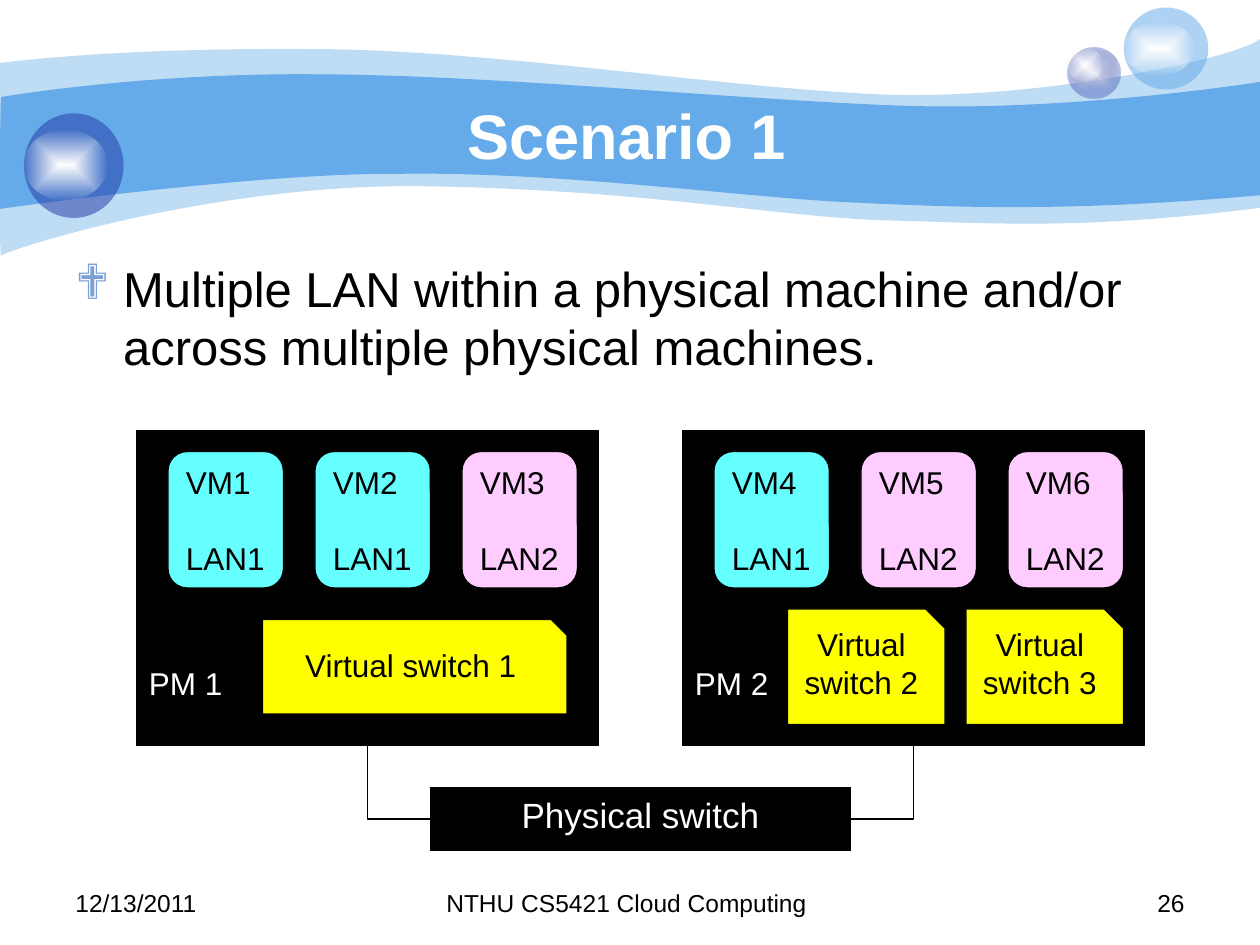
from pptx import Presentation
from pptx import util as u
from pptx.dml.color import RGBColor
from pptx.enum import shapes, text
from pptx.oxml import parse_xml
from pptx.oxml.ns import qn
from lxml import etree

COLORS = {
    "black": "000000", "white": "FFFFFF", "sky": "65AAE9", "navy": "233DA9",
    "mist": "E1E2ED", "bullet": "7DA0D3", "lan1": "66FFFF", "lan2": "FFCCFF",
    "switch": "FFFF00",
}
W, H = u.Inches(10), u.Inches(7.5)
COL, ROW = W // 120, H // 90
KIND = shapes.MSO_SHAPE
LEFT, CENTER, RIGHT = text.PP_ALIGN.LEFT, text.PP_ALIGN.CENTER, text.PP_ALIGN.RIGHT
TOP, MIDDLE, BOTTOM = text.MSO_ANCHOR.TOP, text.MSO_ANCHOR.MIDDLE, text.MSO_ANCHOR.BOTTOM
NS = "http://schemas.openxmlformats.org/drawingml/2006/main"


def rgb(name):
    """Return the named palette colour."""
    return RGBColor.from_string(COLORS[name])


def place(box):
    """Turn a box in columns and rows into slide lengths."""
    x, y, w, h = box
    return int(x * COL), int(y * ROW), int(w * COL), int(h * ROW)


def write(sp, lines, size, color="black", align=LEFT, anchor=TOP, bold=False, gap=0):
    """Write lines as paragraphs, with a gap in points before each later one."""
    tf = sp.text_frame
    tf.word_wrap = True
    tf.vertical_anchor = anchor
    for i, line in enumerate(lines):
        p = tf.paragraphs[0] if i == 0 else tf.add_paragraph()
        p.alignment = align
        if i:
            p.space_before = u.Pt(gap)
        r = p.add_run()
        r.text = line
        r.font.name, r.font.size, r.font.bold = "Arial", u.Pt(size), bold
        r.font.color.rgb = rgb(color)
    return tf


def add_text(s, box, line, size, **style):
    """Add a text box holding one paragraph."""
    return write(s.shapes.add_textbox(*place(box)), [line], size, **style)


def add_block(s, kind, box, fill):
    """Add a filled shape with a thin black outline."""
    sp = s.shapes.add_shape(kind, *place(box))
    sp.shadow.inherit = False
    sp.fill.solid()
    sp.fill.fore_color.rgb = rgb(fill)
    sp.line.color.rgb = rgb("black")
    sp.line.width = u.Pt(0.75)
    return sp


def tint(sp, color, opacity=100):
    """Fill a decoration without outline at an opacity in percent."""
    sp.shadow.inherit = False
    sp.line.fill.background()
    sp.fill.solid()
    sp.fill.fore_color.rgb = rgb(color)
    if opacity < 100:
        clr = sp.element.spPr.find(qn("a:solidFill"))[0]
        etree.SubElement(clr, qn("a:alpha")).set("val", str(opacity * 1000))


def glow(sp, inner, outer, opacity):
    """Fill a decoration with a gradient from its centre outwards."""
    tint(sp, inner)
    spPr = sp.element.spPr
    grad = parse_xml(
        f'<a:gradFill xmlns:a="{NS}" rotWithShape="1"><a:gsLst>'
        f'<a:gs pos="0"><a:srgbClr val="{COLORS[inner]}"/></a:gs>'
        f'<a:gs pos="100000"><a:srgbClr val="{COLORS[outer]}">'
        f'<a:alpha val="{opacity * 1000}"/></a:srgbClr></a:gs></a:gsLst>'
        '<a:path path="shape"><a:fillToRect l="50000" t="50000" r="50000" b="50000"/>'
        '</a:path></a:gradFill>')
    spPr.replace(spPr.find(qn("a:solidFill")), grad)


def bend(segments):
    """Merge each three line segments into one cubic curve."""
    for i in range(0, len(segments), 3):
        cubic = etree.Element(qn("a:cubicBezTo"))
        segments[i].addprevious(cubic)
        for seg in segments[i:i + 3]:
            cubic.append(seg[0])
            seg.getparent().remove(seg)


def add_wave(s, upper, lower, opacity):
    """Add a ribbon between two chains of curves, given in hundredths of an inch."""
    fb = s.shapes.build_freeform(*upper[0], scale=u.Inches(0.01))
    fb.add_line_segments(upper[1:] + lower, close=True)
    sp = fb.convert_to_shape()
    segments = list(sp.element.iter(qn("a:lnTo")))
    turn = len(upper) - 1
    bend(segments[:turn])
    bend(segments[turn + 1:turn + len(lower)])
    tint(sp, "sky", opacity)


def add_orb(s, box, shine, color, opacity, inner=None):
    """Add a ball filling the box (inches) with a shine of the given top, width and height."""
    def ball(*lengths):
        return s.shapes.add_shape(KIND.OVAL, *map(u.Inches, lengths))

    sp = ball(*box)
    if inner:
        glow(sp, inner, color, opacity)
    else:
        tint(sp, color, opacity)
    top, w, h = shine
    glow(ball(box[0], top, w, h), "white", "white", 0)


def add_banner(s):
    """Draw the waves and orbs across the top of the slide."""
    add_wave(s,
             [(0, 50), (24, 47), (107, 38), (247, 39), (386, 39), (575, 70),
              (699, 75), (822, 80), (980, 47), (1000, 31)],
             [(1000, 165), (858, 183), (787, 177), (705, 175), (622, 173), (515, 151),
              (343, 148), (172, 144), (4, 199), (1, 203), (-1, 208), (0, 75), (0, 50)], 41)
    add_wave(s,
             [(1, 77), (2, 77), (110, 58), (248, 59), (386, 59), (595, 80),
              (718, 84), (841, 88), (976, 69), (1000, 65)],
             [(1000, 155), (853, 168), (765, 165), (682, 161), (599, 158), (447, 136),
              (317, 138), (203, 137), (-2, 166), (-1, 166), (0, 166), (0, 77), (1, 77)], 100)
    add_orb(s, (8.47, 0.38, 0.42, 0.4), (0.38, 0.28, 0.27), "navy", 31, inner="mist")
    add_orb(s, (8.92, 0.06, 0.67, 0.65), (0.17, 0.56, 0.43), "sky", 53)
    add_orb(s, (0.19, 0.9, 0.79, 0.83), (1.03, 0.66, 0.56), "navy", 53)


def add_body(s, box, line):
    """Add the bulleted statement."""
    p = add_text(s, box, line, 28).paragraphs[0]
    p.space_before = u.Pt(4)
    pPr = p._p.get_or_add_pPr()
    pPr.set("marL", str(u.Inches(0.38)))
    pPr.set("indent", str(-u.Inches(0.38)))
    clr = etree.SubElement(etree.SubElement(pPr, qn("a:buClr")), qn("a:srgbClr"))
    clr.set("val", COLORS["bullet"])
    etree.SubElement(pPr, qn("a:buFont")).set("typeface", "Wingdings")
    etree.SubElement(pPr, qn("a:buChar")).set("char", "❖")


def add_machine(s, box, name, vms, switches):
    """Add a physical machine with its VMs and virtual switches, offset from its corner."""
    x, y, _, _ = box
    machine = add_block(s, KIND.RECTANGLE, box, "black")
    write(machine, [name], 18, "white", anchor=BOTTOM).margin_bottom = int(4.2 * ROW)
    for i, (vm, lan) in enumerate(vms):
        sp = add_block(s, KIND.ROUNDED_RECTANGLE, (x + 3 + 14 * i, y + 2, 11, 13), lan.lower())
        write(sp, [vm, lan], 18, gap=21.5)
    for label, (dx, dy, w, h), inset in switches:
        sp = add_block(s, KIND.SNIP_1_RECTANGLE, (x + dx, y + dy, w, h), "switch")
        write(sp, [label], 18, align=CENTER).margin_top = u.Inches(inset)
    return machine


def add_link(s, switch, side, machine):
    """Join a side of the physical switch to the bottom of a machine with one bend."""
    c = s.shapes.add_connector(shapes.MSO_CONNECTOR.ELBOW, 0, 0, 0, 0)
    c.begin_connect(switch, side)
    c.end_connect(machine, 2)
    c.line.color.rgb = rgb("black")
    c.line.width = u.Pt(0.75)
    spPr = c.element.spPr
    spPr.find(qn("a:prstGeom")).set("prst", "bentConnector2")
    etree.SubElement(spPr, qn("a:effectLst"))


def add_network(s, x, y):
    """Draw both machines and the physical switch from the top left cell."""
    pm1 = add_machine(s, (x, y, 44, 30), "PM 1",
                      [("VM1", "LAN1"), ("VM2", "LAN1"), ("VM3", "LAN2")],
                      [("Virtual switch 1", (12, 18, 29, 9), 0.15)])
    pm2 = add_machine(s, (x + 52, y, 44, 30), "PM 2",
                      [("VM4", "LAN1"), ("VM5", "LAN2"), ("VM6", "LAN2")],
                      [(f"Virtual switch {n}", (10 + 17 * i, 17, 15, 11), 0.05)
                       for i, n in enumerate((2, 3))])
    switch = add_block(s, KIND.RECTANGLE, (x + 28, y + 34, 40, 6), "black")
    write(switch, ["Physical switch"], 20, "white", CENTER)
    add_link(s, switch, 3, pm2)
    add_link(s, switch, 1, pm1)


def add_footer(s, y):
    """Add the date, course and slide number in one row."""
    for x, w, line, align in ((6, 28, "12/13/2011", LEFT),
                              (41, 38, "NTHU CS5421 Cloud Computing ", CENTER),
                              (86, 28, "26", RIGHT)):
        add_text(s, (x, y, w, 4.2), line, 14, align=align)


def main():
    """Build and save the slide."""
    prs = Presentation()
    prs.slide_width, prs.slide_height = W, H
    s = prs.slides.add_slide(prs.slide_layouts[6])
    add_banner(s)
    add_text(s, (12, 9, 97, 7.5), "Scenario 1 ", 36, color="white", align=CENTER,
             anchor=MIDDLE, bold=True)
    add_body(s, (6, 24, 108, 13),
             "Multiple LAN within a physical machine and/or across multiple physical machines.")
    add_footer(s, 84)
    add_network(s, 13, 41)
    prs.save("out.pptx")


if __name__ == "__main__":
    main()
